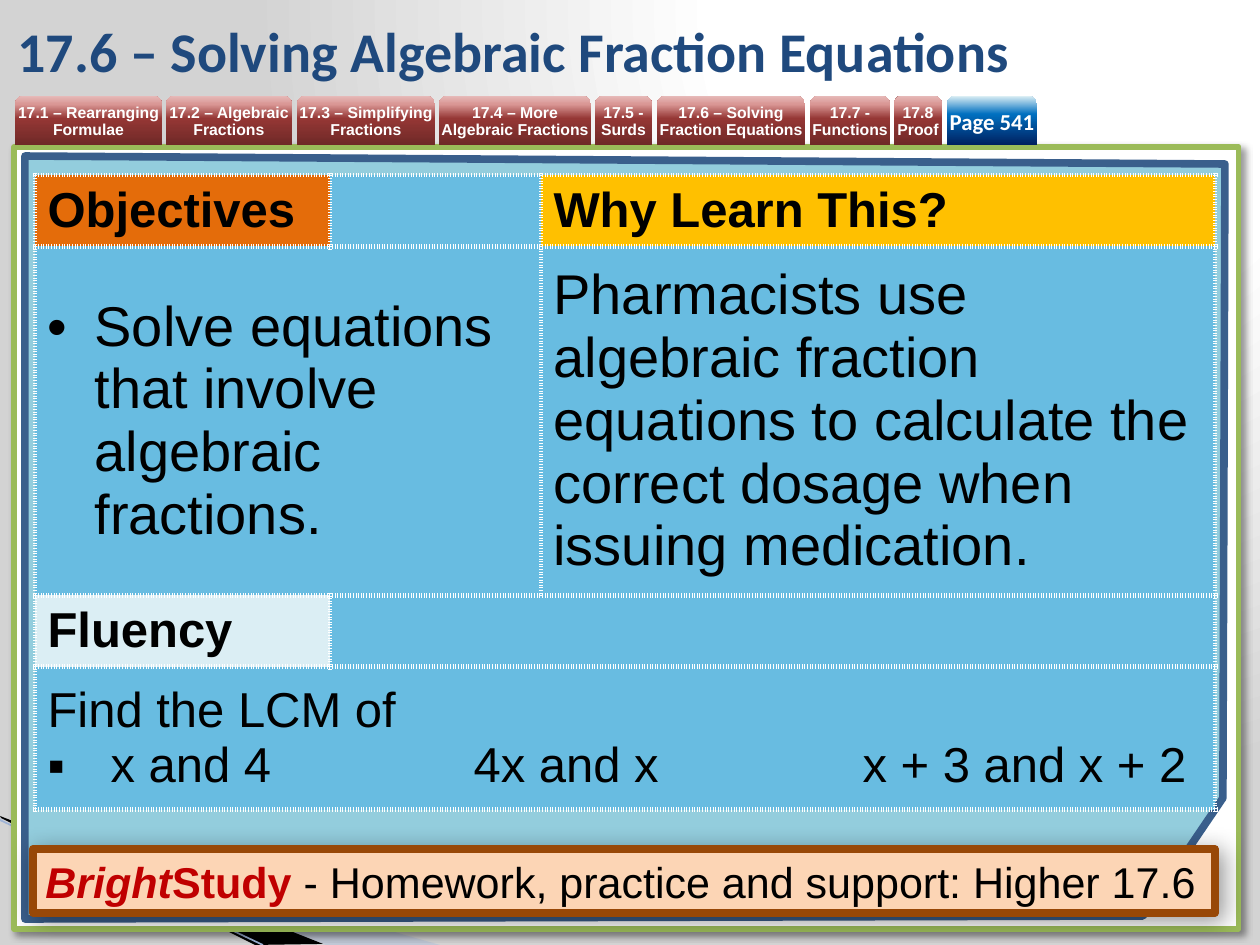
from lxml import etree
from pptx import Presentation
from pptx import util as u
from pptx.dml.color import RGBColor
from pptx.enum import shapes, text
from pptx.oxml.ns import qn

PX = 914400 / 126
COLOURS = {
    "white": "FFFFFF", "black": "000000", "grey": "D3D3D3", "title": "1F497D",
    "wedge": "A7B9DB", "streak": "9EB3D6", "frame": "9BBB59", "panel": "93CDDD",
    "panel edge": "3A5F8C", "cell": "68BCE1", "objectives": "E46C0A", "why": "FFC000",
    "fluency": "DBEEF4", "banner": "FCD5B5", "banner edge": "984807", "red": "C00000",
}
TAB_STOPS = [(0, "6F2927"), (54, "953735"), (83, "D99694"), (100, "E6B9B8")]
PAGE_STOPS = [(0, "002060"), (63, "0070C0"), (100, "DBEEF4")]
CHAPTER_TABS = [
    (15, 147, "17.1 – Rearranging Formulae"),
    (166, 126, "17.2 – Algebraic Fractions"),
    (297, 138, "17.3 – Simplifying Fractions"),
    (439, 152, "17.4 – More Algebraic Fractions"),
    (595, 57, "17.5 - Surds"),
    (657, 148, "17.6 – Solving Fraction Equations"),
    (810, 80, "17.7 - Functions"),
    (894, 48, "17.8 Proof"),
]


def px(length):
    return u.Emu(round(length * PX))


def rgb(name):
    return RGBColor.from_string(COLOURS[name])


def add_element(parent, tag, **attributes):
    element = etree.SubElement(parent, qn(tag))
    for name, value in attributes.items():
        element.set(name, str(value))
    return element


def set_gradient(fill, owner, stops):
    """Give the owner's fill these stops and return its a:gradFill, without direction."""
    fill.gradient()
    gradient = owner.find(".//" + qn("a:gradFill"))
    for child in list(gradient):
        gradient.remove(child)
    stop_list = add_element(gradient, "a:gsLst")
    for position, colour in stops:
        stop = add_element(stop_list, "a:gs", pos=position * 1000)
        add_element(stop, "a:srgbClr", val=colour)
    return gradient


def set_look(shape, fill, edge=None, width=0):
    shape.shadow.inherit = False
    shape.fill.solid()
    shape.fill.fore_color.rgb = rgb(fill)
    if edge:
        shape.line.color.rgb = rgb(edge)
        shape.line.width = u.Pt(width)
    else:
        shape.line.fill.background()


def add_shadow(shape, blur, distance):
    effects = shape._element.spPr.find(qn("a:effectLst"))
    shadow = add_element(effects, "a:outerShdw", blurRad=u.Pt(blur), dist=u.Pt(distance),
                         dir=45 * 60000, algn="tl", rotWithShape=0)
    colour = add_element(shadow, "a:srgbClr", val=COLOURS["black"])
    add_element(colour, "a:alpha", val=40000)


def set_font(item, size, colour, bold=False, name="Arial"):
    font = item.font
    font.name, font.size, font.bold = name, u.Pt(size), bold
    font.color.rgb = rgb(colour)


def add_polygon(slide, points, *look):
    builder = slide.shapes.build_freeform(*points[0], scale=PX)
    builder.add_line_segments(points[1:], close=True)
    shape = builder.convert_to_shape()
    set_look(shape, *look)
    return shape


def add_backdrop(slide):
    stops = [(0, COLOURS["white"]), (40, COLOURS["white"]), (100, COLOURS["grey"])]
    gradient = set_gradient(slide.background.fill, slide._element, stops)
    focus = add_element(gradient, "a:path", path="circle")
    add_element(focus, "a:fillToRect", l=65000, t=0, r=0, b=98000)

    wedge = add_polygon(slide, [(0, 819), (440, 945), (326, 945), (0, 818)], "wedge")
    colour = wedge._element.spPr.find(".//" + qn("a:srgbClr"))
    add_element(colour, "a:alpha", val=40000)
    add_polygon(slide, [(0, 816), (323, 944), (255, 945), (1, 818)], "black")
    streak = slide.shapes.add_connector(
        shapes.MSO_CONNECTOR.STRAIGHT, px(0), px(820), px(263), px(945))
    streak.line.color.rgb = rgb("streak")
    streak.line.width = u.Pt(0.95)
    add_element(streak._element.spPr, "a:effectLst")


def add_panel(slide, left, top, width, height):
    frame = slide.shapes.add_shape(
        shapes.MSO_SHAPE.RECTANGLE, px(left), px(top), px(width), px(height))
    set_look(frame, "white", "frame", 3)
    add_shadow(frame, 4, 3)
    corners = [(11, 9), (1211, 17), (1209, 651), (1129, 769), (11, 772)]
    add_polygon(slide, [(left + x, top + y) for x, y in corners],
                "panel", "panel edge", 4.33)


def add_title(slide, left, top, width, height):
    frame = slide.shapes.add_textbox(px(left), px(top), px(width), px(height)).text_frame
    frame.word_wrap = True
    frame.vertical_anchor = text.MSO_ANCHOR.MIDDLE
    frame.text = "17.6 – Solving Algebraic Fraction Equations"
    set_font(frame.paragraphs[0], 32, "title", True, "Calibri")


def add_tab(slide, left, top, width, label, stops, size, font, spacing=None):
    tab = slide.shapes.add_shape(
        shapes.MSO_SHAPE.ROUND_2_SAME_RECTANGLE, px(left), px(top), px(width), px(49))
    tab.shadow.inherit = False
    tab.line.fill.background()
    gradient = set_gradient(tab.fill, tab._element, stops)
    add_element(gradient, "a:lin", ang=270 * 60000, scaled=0)
    frame = tab.text_frame
    frame.margin_left = frame.margin_right = frame.margin_top = frame.margin_bottom = 0
    frame.vertical_anchor = text.MSO_ANCHOR.MIDDLE
    frame.text = label
    paragraph = frame.paragraphs[0]
    paragraph.alignment = text.PP_ALIGN.CENTER
    paragraph.line_spacing = spacing
    set_font(paragraph, size, "white", True, font)


def style_cell(cell, fill):
    properties = cell._tc.get_or_add_tcPr()
    for side in "LRTB":
        border = add_element(properties, f"a:ln{side}", w=u.Pt(3))
        colour = add_element(border, "a:solidFill")
        add_element(colour, "a:srgbClr", val=COLOURS["white"])
        add_element(border, "a:prstDash", val="sysDot")
    cell.fill.solid()
    cell.fill.fore_color.rgb = rgb(fill)
    cell.vertical_anchor = text.MSO_ANCHOR.MIDDLE


def add_bullet(paragraph, bullet, indent, tab_stops=()):
    properties = paragraph._p.get_or_add_pPr()
    properties.set("marL", str(px(indent)))
    properties.set("indent", str(-px(indent)))
    add_element(properties, "a:buFont", typeface="Arial")
    add_element(properties, "a:buChar", char=bullet)
    if tab_stops:
        tabs = add_element(properties, "a:tabLst")
        for position in tab_stops:
            add_element(tabs, "a:tab", pos=px(position), algn="l")


def add_lesson_table(slide, left, top, widths, heights):
    table = slide.shapes.add_table(
        len(heights), len(widths), px(left), px(top),
        px(sum(widths)), px(sum(heights))).table
    for column, width in zip(table.columns, widths):
        column.width = px(width)
    for row, height in zip(table.rows, heights):
        row.height = px(height)
    fills = {(0, 0): "objectives", (0, 2): "why", (2, 0): "fluency"}
    for row in range(len(heights)):
        for column in range(len(widths)):
            style_cell(table.cell(row, column), fills.get((row, column), "cell"))
    for row, first, last in [(1, 0, 1), (2, 1, 2), (3, 0, 2)]:
        table.cell(row, first).merge(table.cell(row, last))

    contents = [
        (0, 0, 28, True, "Objectives"),
        (0, 2, 28, True, "Why Learn This?"),
        (1, 0, 32, False, "Solve equations that involve algebraic fractions."),
        (1, 2, 32, False, "Pharmacists use algebraic fraction equations to calculate "
                          "the correct dosage when issuing medication."),
        (2, 0, 28, True, "Fluency"),
        (3, 0, 28, False, "Find the LCM of\nx and 4\t4x and x\tx + 3 and x + 2"),
    ]
    for row, column, size, bold, words in contents:
        table.cell(row, column).text = words
    add_bullet(table.cell(1, 0).text_frame.paragraphs[0], "•", 47)
    add_bullet(table.cell(3, 0).text_frame.paragraphs[1], "▪", 63, (426, 815))
    for row, column, size, bold, words in contents:
        for paragraph in table.cell(row, column).text_frame.paragraphs:
            set_font(paragraph, size, "black", bold)


def add_homework_banner(slide, left, top, width, height):
    banner = slide.shapes.add_shape(
        shapes.MSO_SHAPE.RECTANGLE, px(left), px(top), px(width), px(height))
    set_look(banner, "banner", "banner edge", 4.33)
    add_shadow(banner, 13, 3)
    frame = banner.text_frame
    frame.vertical_anchor = text.MSO_ANCHOR.MIDDLE
    paragraph = frame.paragraphs[0]
    paragraph.alignment = text.PP_ALIGN.LEFT
    for words, colour, bold, italic in [
            ("Bright", "red", True, True), ("Study ", "red", True, False),
            ("- Homework, practice and support: Higher 17.6", "black", False, False)]:
        run = paragraph.add_run()
        run.text = words
        set_font(run, 24.6, colour, bold)
        run.font.italic = italic


def main():
    presentation = Presentation()
    presentation.slide_width, presentation.slide_height = px(1260), px(945)
    slide = presentation.slides.add_slide(presentation.slide_layouts[6])
    add_backdrop(slide)
    add_panel(slide, 14, 147, 1225, 782)
    for left, width, label in CHAPTER_TABS:
        add_tab(slide, left, 96, width, label, TAB_STOPS, 9, "Arial", u.Pt(10))
    add_title(slide, 5, 6, 1042, 89)
    add_tab(slide, 947, 96, 90, "Page 541", PAGE_STOPS, 13, "Calibri")
    add_lesson_table(slide, 35, 175, (295, 211, 674), (70, 326, 68, 143))
    add_homework_banner(slide, 33, 849, 1182, 64)
    presentation.save("out.pptx")


if __name__ == "__main__":
    main()
